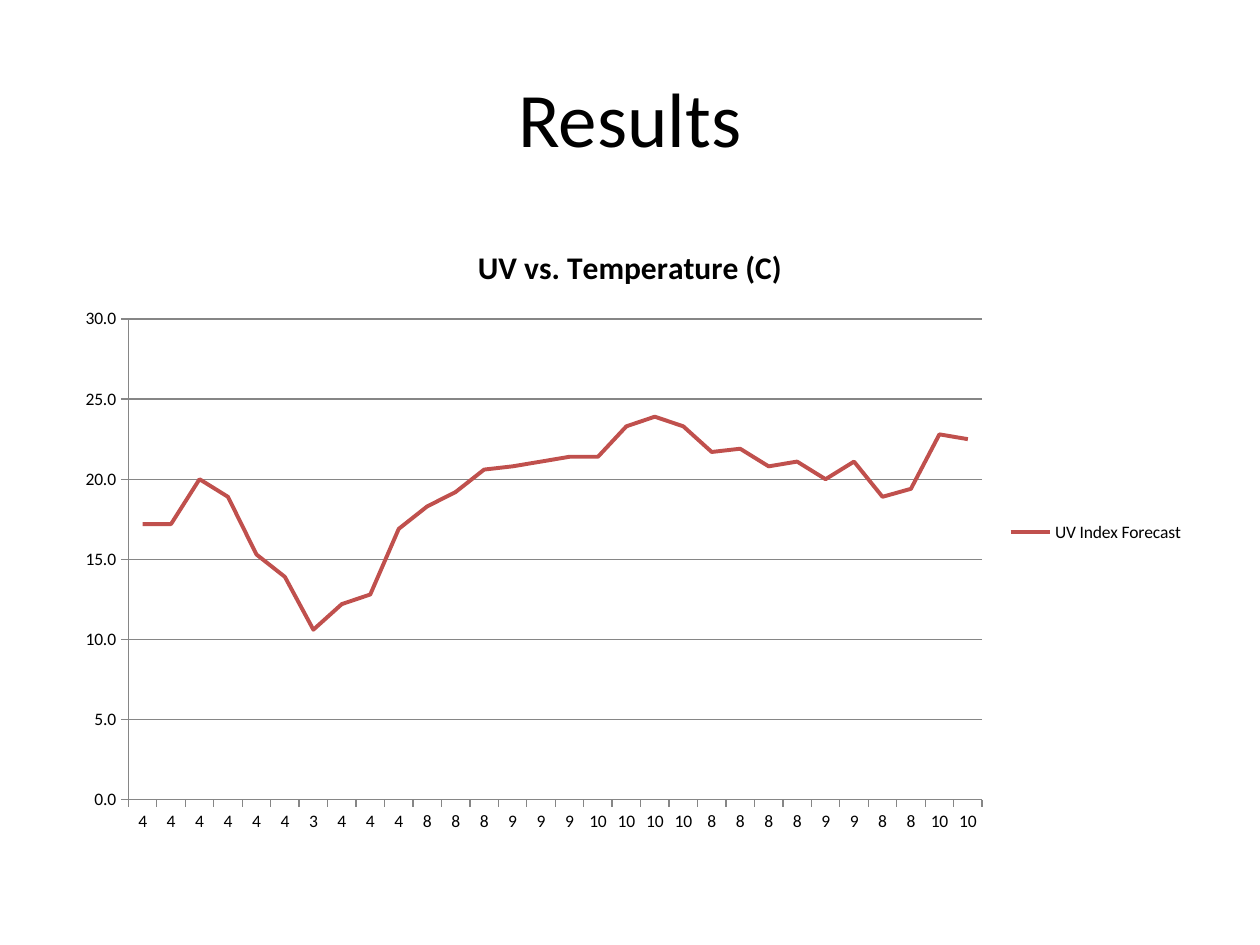
from pptx import Presentation
from pptx.chart.data import CategoryChartData
from pptx.dml.color import RGBColor
from pptx.enum.chart import XL_CHART_TYPE, XL_LEGEND_POSITION, XL_TICK_MARK
from pptx.enum.text import MSO_ANCHOR, PP_ALIGN
from pptx.util import Inches, Pt

# Content
TITLE = "Results"
CHART_TITLE = "UV vs. Temperature (C)"
SERIES_NAME = "UV Index Forecast"
UV_INDEX = [4, 4, 4, 4, 4, 4, 3, 4, 4, 4, 8, 8, 8, 9, 9,
            9, 10, 10, 10, 10, 8, 8, 8, 8, 9, 9, 8, 8, 10, 10]
TEMPERATURES = [17.2, 17.2, 20, 18.9, 15.3, 13.9, 10.6, 12.2, 12.8, 16.9,
                18.3, 19.2, 20.6, 20.8, 21.1, 21.4, 21.4, 23.3, 23.9, 23.3,
                21.7, 21.9, 20.8, 21.1, 20, 21.1, 18.9, 19.4, 22.8, 22.5]

FONT = "Calibri"
COLORS = {"text": "000000", "line": "C0504D", "axis": "868686"}


def rgb(name):
    return RGBColor.from_string(COLORS[name])


def style_font(font, size, bold=False):
    font.name = FONT
    font.size = Pt(size)
    font.bold = bold
    font.color.rgb = rgb("text")


def style_line(line, color, width):
    line.color.rgb = rgb(color)
    line.width = Pt(width)


prs = Presentation()
prs.slide_width, prs.slide_height = Inches(10), Inches(7.5)
slide = prs.slides.add_slide(prs.slide_layouts[6])

# Slide title
tf = slide.shapes.add_textbox(
    Inches(0.5), Inches(0.3), Inches(9), Inches(1.25)).text_frame
tf.word_wrap = True
tf.vertical_anchor = MSO_ANCHOR.MIDDLE
p = tf.paragraphs[0]
p.alignment = PP_ALIGN.CENTER
r = p.add_run()
r.text = TITLE
style_font(r.font, 44)

# Line chart
data = CategoryChartData(number_format="0.0")
data.categories = [str(uv) for uv in UV_INDEX]
data.add_series(SERIES_NAME, TEMPERATURES)
chart = slide.shapes.add_chart(
    XL_CHART_TYPE.LINE_STACKED, Inches(0.5), Inches(1.75),
    Inches(9), Inches(4.95), data).chart
style_font(chart.font, 10)

series = chart.plots[0].series[0]
series.smooth = False
style_line(series.format.line, "line", 2.25)

# Chart title and legend
chart.has_title = True
r = chart.chart_title.text_frame.paragraphs[0].add_run()
r.text = CHART_TITLE
style_font(r.font, 18, bold=True)
chart.chart_title.include_in_layout = False
chart.has_legend = True
chart.legend.position = XL_LEGEND_POSITION.RIGHT
chart.legend.include_in_layout = False

# Axes
for axis in (chart.category_axis, chart.value_axis):
    axis.major_tick_mark = XL_TICK_MARK.OUTSIDE
    axis.minor_tick_mark = XL_TICK_MARK.NONE
    style_line(axis.format.line, "axis", 0.75)
value_axis = chart.value_axis
value_axis.minimum_scale, value_axis.maximum_scale = 0, 30
value_axis.major_unit = 5
value_axis.tick_labels.number_format = "0.0"
value_axis.tick_labels.number_format_is_linked = False
value_axis.has_major_gridlines = True
style_line(value_axis.major_gridlines.format.line, "axis", 0.75)

prs.save("out.pptx")
